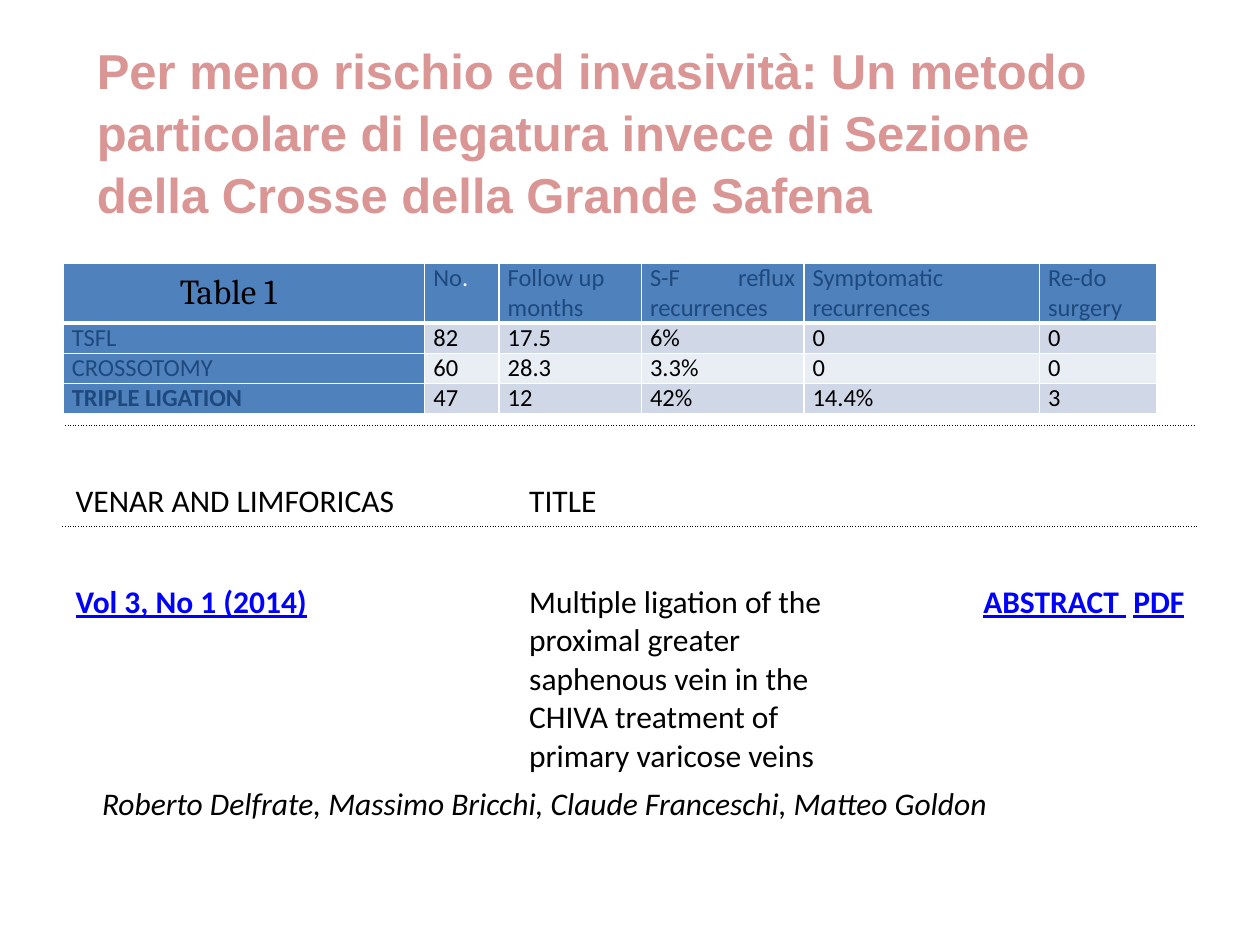
from dataclasses import dataclass

from lxml.etree import SubElement
from pptx import Presentation
from pptx.dml.color import RGBColor
from pptx.enum.shapes import MSO_SHAPE
from pptx.enum.text import MSO_ANCHOR, PP_ALIGN
from pptx.oxml.ns import qn
from pptx.util import Inches, Pt


@dataclass(frozen=True)
class Theme:
    """Colours, fonts and type sizes of the slide."""
    white: str = "FFFFFF"
    black: str = "000000"
    rose: str = "D99694"
    blue: str = "4F81BD"
    navy: str = "1F497D"
    link: str = "0000FF"
    bands: tuple = ("D0D8E8", "E9EDF4")
    title_font: str = "Arial"
    caption_font: str = "Cambria"
    body_font: str = "Calibri"
    title_size: int = 28
    caption_size: int = 20
    body_size: int = 18
    data_size: int = 14


THEME = Theme()

DATA_HEADERS = [["No", "."], ["Follow up", "months"], ["S-F reflux recurrences"],
                ["Symptomatic", "recurrences"], ["Re-do", "surgery"]]
DATA_ROWS = [
    ["TSFL", "82", "17.5", "6%", "0", "0"],
    ["CROSSOTOMY", "60", "28.3", "3.3%", "0", "0"],
    ["TRIPLE LIGATION", "47", "12", "42%", "14.4%", "3"],
]


def add_run(paragraph, text, size, color=THEME.black, font=THEME.body_font,
            bold=False, italic=False, underline=False):
    """Append one formatted run to a paragraph."""
    run = paragraph.add_run()
    run.text = text
    run.font.size = Pt(size)
    run.font.name = font
    run.font.color.rgb = RGBColor.from_string(color)
    run.font.bold, run.font.italic, run.font.underline = bold, italic, underline


def next_paragraph(frame, index):
    """Return the first paragraph, or a new one for later indexes."""
    return frame.add_paragraph() if index else frame.paragraphs[0]


def fill_solid(target, color):
    """Give a shape or cell a solid fill."""
    target.fill.solid()
    target.fill.fore_color.rgb = RGBColor.from_string(color)


def set_borders(cell, color, widths, dash="solid"):
    """Draw the cell sides named in widths, in points."""
    properties = cell._tc.get_or_add_tcPr()
    sides = [side for side in "LRTB" if side in widths]
    for position, side in enumerate(sides):
        line = SubElement(properties, qn(f"a:ln{side}"), w=str(Pt(widths[side])))
        paint = SubElement(line, qn("a:solidFill"))
        SubElement(paint, qn("a:srgbClr"), val=color)
        SubElement(line, qn("a:prstDash"), val=dash)
        properties.insert(position, line)


def set_margins(cell, side, vertical):
    """Set equal side margins and equal top and bottom margins."""
    cell.margin_left = cell.margin_right = Inches(side)
    cell.margin_top = cell.margin_bottom = Inches(vertical)


def add_grid(slide, left, top, columns, rows):
    """Add a table without style bands, sized by its columns and rows."""
    frame = slide.shapes.add_table(len(rows), len(columns), Inches(left), Inches(top),
                                   Inches(sum(columns)), Inches(sum(rows)))
    grid = frame.table
    grid.first_row = grid.horz_banding = False
    for column, width in zip(grid.columns, columns):
        column.width = Inches(width)
    for row, height in zip(grid.rows, rows):
        row.height = Inches(height)
    return grid


def write_data_cell(cell, lines, color, bold=False):
    """Write justified paragraphs into a result cell."""
    for index, text in enumerate(lines):
        paragraph = next_paragraph(cell.text_frame, index)
        paragraph.alignment = PP_ALIGN.JUSTIFY
        add_run(paragraph, text, THEME.data_size, color, bold=bold)


def add_results(slide):
    """Add the table of follow-up results."""
    grid = add_grid(slide, 0.5, 2.09, [2.87, 0.59, 1.13, 1.29, 1.87, 0.93],
                    [0.47] + [0.24] * len(DATA_ROWS))
    for row in range(len(DATA_ROWS) + 1):
        for column in range(len(grid.columns)):
            cell = grid.cell(row, column)
            heading = row == 0 or column == 0
            set_margins(cell, 0.07, 0)
            fill_solid(cell, THEME.blue if heading else THEME.bands[(row - 1) % 2])
            set_borders(cell, THEME.white, {"L": 1, "R": 1, "T": 1, "B": 1 if row else 3})
            if row:
                write_data_cell(cell, [DATA_ROWS[row - 1][column]],
                                THEME.navy if heading else THEME.black,
                                bold=heading and row == len(DATA_ROWS))
            elif column > 1:
                write_data_cell(cell, DATA_HEADERS[column - 1], THEME.navy)
    number, stop = DATA_HEADERS[0]
    number_cell = grid.cell(0, 1)
    write_data_cell(number_cell, [number], THEME.navy)
    add_run(number_cell.text_frame.paragraphs[0], stop, THEME.data_size, THEME.white)


def add_caption(slide):
    """Add the name of the results table."""
    box = slide.shapes.add_textbox(Inches(1.33), Inches(2.09), Inches(1.36), Inches(0.44))
    box.text_frame.word_wrap = True
    add_run(box.text_frame.paragraphs[0], "Table 1", THEME.caption_size,
            font=THEME.caption_font)


def add_reference(slide):
    """Add the journal reference with its dotted rules."""
    grid = add_grid(slide, 0.5, 3.38, [3.6, 2.7, 2.7], [0.4, 0.4, 0.4, 1.6, 0.4])
    ruled_sides = {0: "T", 1: "B", 2: "T"}
    for row in range(len(grid.rows)):
        for column in range(len(grid.columns)):
            cell = grid.cell(row, column)
            set_margins(cell, 0.1, 0.05)
            fill_solid(cell, THEME.white)
            if row in ruled_sides:
                set_borders(cell, THEME.black, {ruled_sides[row]: 0.75}, "sysDot")
    for row, first_column in [(0, 0), (1, 1), (2, 0), (4, 0)]:
        grid.cell(row, first_column).merge(grid.cell(row, 2))

    link = {"color": THEME.link, "bold": True, "underline": True}
    entries = [
        (1, 0, [("VENAR AND LIMFORICAS", {})]),
        (1, 1, [("TITLE", {})]),
        (3, 0, [("Vol 3, No 1 (2014)", link)]),
        (3, 1, [("Multiple ligation of the proximal greater saphenous vein in the "
                 "CHIVA treatment of primary varicose veins", {})]),
        (3, 2, [("ABSTRACT ", link), (" ", {}), ("PDF", link)]),
        (4, 0, [("Roberto Delfrate, Massimo Bricchi, Claude Franceschi, Matteo Goldon",
                 {"italic": True})]),
    ]
    anchors = {1: MSO_ANCHOR.BOTTOM, 3: MSO_ANCHOR.TOP, 4: MSO_ANCHOR.MIDDLE}
    for row, column, runs in entries:
        cell = grid.cell(row, column)
        cell.vertical_anchor = anchors[row]
        for text, style in runs:
            add_run(cell.text_frame.paragraphs[0], text, THEME.body_size, **style)
    grid.cell(3, 2).text_frame.paragraphs[0].alignment = PP_ALIGN.RIGHT
    grid.cell(4, 0).margin_left = Inches(0.31)


def add_title(slide):
    """Add the title on its white panel."""
    panel = slide.shapes.add_shape(MSO_SHAPE.RECTANGLE, Inches(0.67), Inches(0.25),
                                   Inches(8.5), Inches(1.51))
    panel.shadow.inherit = False
    fill_solid(panel, THEME.white)
    panel.line.fill.background()
    frame = panel.text_frame
    frame.word_wrap = True
    frame.vertical_anchor = MSO_ANCHOR.TOP
    lines = ["Per meno rischio ed invasività: Un metodo particolare di legatura "
             "invece di Sezione", "della Crosse della Grande Safena"]
    for index, text in enumerate(lines):
        paragraph = next_paragraph(frame, index)
        paragraph.alignment = PP_ALIGN.LEFT
        paragraph.line_spacing = 1.05
        add_run(paragraph, text, THEME.title_size, THEME.rose, THEME.title_font, bold=True)


def main():
    """Build and save the slide."""
    deck = Presentation()
    deck.slide_width, deck.slide_height = Inches(10), Inches(7.5)
    slide = deck.slides.add_slide(deck.slide_layouts[6])
    add_results(slide)
    add_caption(slide)
    add_reference(slide)
    add_title(slide)
    deck.save("out.pptx")


if __name__ == "__main__":
    main()
